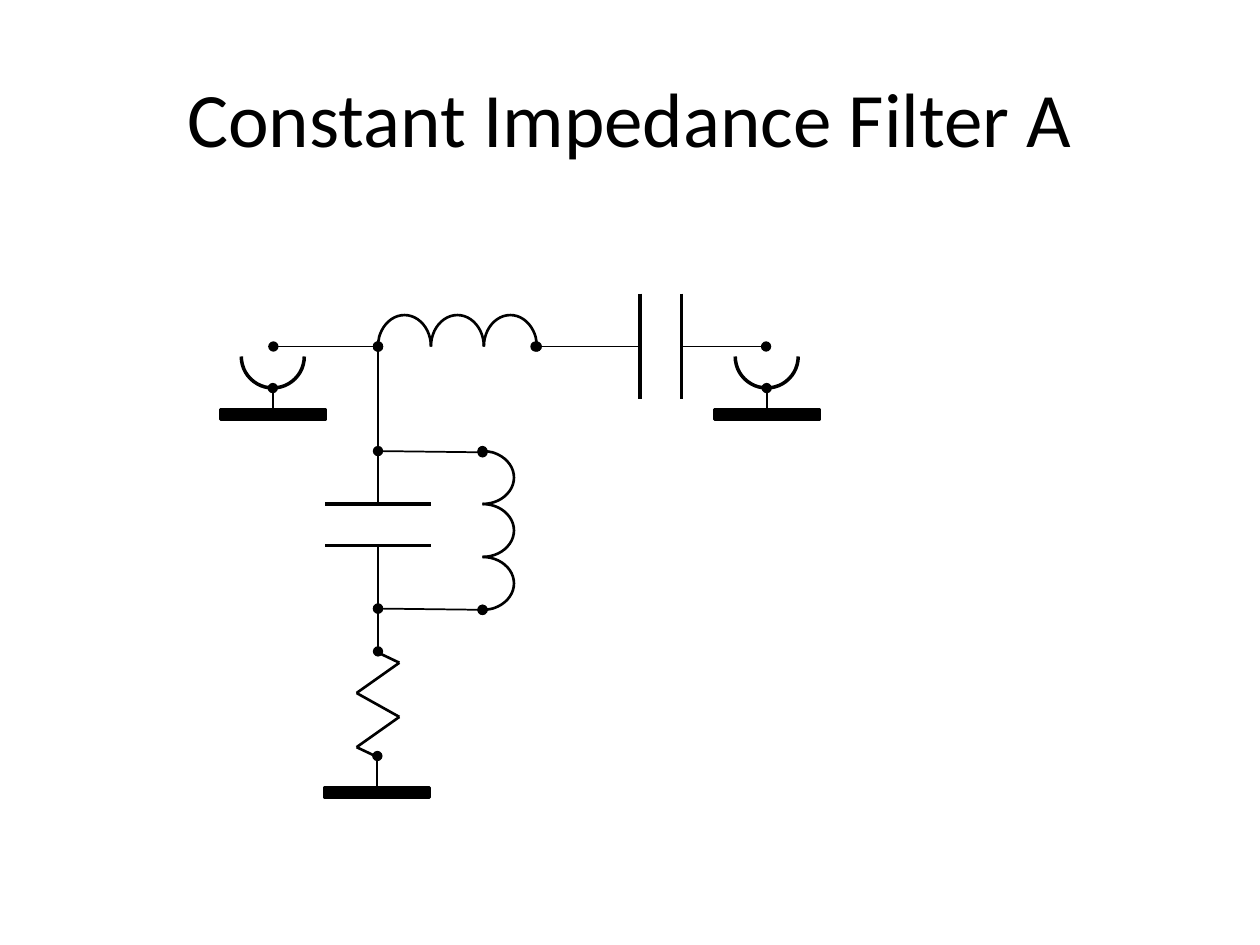
from itertools import pairwise

from lxml.etree import SubElement
from pptx import Presentation
from pptx.dml.color import RGBColor
from pptx.enum.shapes import MSO_CONNECTOR as Connector, MSO_SHAPE as Shape
from pptx.enum.text import MSO_ANCHOR as Anchor, PP_ALIGN as Align
from pptx.oxml.ns import qn
from pptx.util import Inches, Pt

INK = "000000"
LOBE_WIDTH, LOBE_HEIGHT = 0.5, 0.42
PLATE, PLATE_GAP = 0.84, 0.33
BAR_WIDTH, BAR_HEIGHT = 0.83, 0.08


def color(hex_code):
    return RGBColor.from_string(hex_code)


def set_stroke(part, weight, head=False, tail=False):
    part.line.color.rgb = color(INK)
    part.line.width = Pt(weight)
    outline = part.element.find(".//" + qn("a:ln"))
    for tag, dotted in (("a:headEnd", head), ("a:tailEnd", tail)):
        if dotted:
            SubElement(outline, qn(tag), type="oval")


def add_line(shapes, start, end, weight=1, head=False, tail=False):
    wire = shapes.add_connector(Connector.STRAIGHT, *map(Inches, (*start, *end)))
    set_stroke(wire, weight, head, tail)
    SubElement(wire.element.spPr, qn("a:effectLst"))


def add_half_ring(shapes, center, width, height, rotation, weight, head=False, tail=False):
    x, y = center
    ring = shapes.add_shape(
        Shape.ARC, *map(Inches, (x - width / 2, y - height / 2, width, height)))
    ring.adjustments[0], ring.adjustments[1] = 162, 54
    ring.rotation = rotation
    ring.fill.background()
    ring.shadow.inherit = False
    set_stroke(ring, weight, head, tail)


def add_inductor(slide, left, top, upright):
    coil = slide.shapes.add_group_shape().shapes
    for turn in range(3):
        along = LOBE_HEIGHT * (turn + 0.5)
        center = (left, top + along) if upright else (left + along, top)
        add_half_ring(coil, center, LOBE_WIDTH, LOBE_HEIGHT, 0 if upright else 270,
                      1.5, head=turn == 0, tail=turn == 2)


def add_capacitor(slide, left, top, upright):
    plates = slide.shapes.add_group_shape().shapes
    for offset in (0, PLATE_GAP):
        if upright:
            start, end = (left + offset, top), (left + offset, top + PLATE)
        else:
            start, end = (left, top + offset), (left + PLATE, top + offset)
        add_line(plates, start, end, 2)


def add_resistor(slide, left, top):
    zigzag = slide.shapes.add_group_shape().shapes
    bends = [(0.15, 0), (0.34, 0.09), (0, 0.33), (0.34, 0.52), (0, 0.76), (0.19, 0.85)]
    for start, end in pairwise((left + x, top + y) for x, y in bends):
        add_line(zigzag, start, end, 1.5)


def add_ground(shapes, left, top, lead):
    bar = shapes.add_shape(
        Shape.RECTANGLE, *map(Inches, (left, top, BAR_WIDTH, BAR_HEIGHT)))
    bar.fill.solid()
    bar.fill.fore_color.rgb = color(INK)
    bar.shadow.inherit = False
    set_stroke(bar, 2)
    middle = left + BAR_WIDTH / 2
    add_line(shapes, (middle, top - lead), (middle, top), head=True)


def add_socket(slide, left, top):
    socket = slide.shapes.add_group_shape().shapes
    add_half_ring(socket, (left + BAR_WIDTH / 2, top + 0.25), 0.5, 0.5, 90, 2)
    add_ground(socket, left, top + 0.67, 0.17)


def add_wires(slide, left, top):
    wires = slide.shapes.add_group_shape().shapes
    runs = [
        ((0, 0), (0.83, 0), True, True),
        ((2.08, 0), (2.91, 0), True, False),
        ((3.25, 0), (3.91, 0), False, True),
        ((0.83, 0.83), (1.66, 0.84), True, True),
        ((0.83, 2.08), (1.66, 2.09), True, True),
        ((0.83, 0.83), (0.83, 0), False, True),
        ((0.83, 0.83), (0.83, 1.25), False, False),
        ((0.83, 1.58), (0.83, 2.08), False, False),
        ((0.83, 2.42), (0.83, 2.08), True, True),
    ]
    for (x1, y1), (x2, y2), head, tail in runs:
        add_line(wires, (left + x1, top + y1), (left + x2, top + y2), 1, head, tail)


def add_title(slide, left, top, width, height):
    title = slide.shapes.title
    title.left, title.top, title.width, title.height = map(
        Inches, (left, top, width, height))
    title.text_frame.vertical_anchor = Anchor.MIDDLE
    heading = title.text_frame.paragraphs[0]
    heading.alignment = Align.CENTER
    run = heading.add_run()
    run.text = "Constant Impedance Filter A"
    run.font.name = "Calibri"
    run.font.size = Pt(44)
    run.font.color.rgb = color(INK)


def add_circuit(slide, left, top):
    add_inductor(slide, left + 2.08, top + 1, upright=True)
    add_inductor(slide, left + 1.25, top + 0.17, upright=False)
    add_wires(slide, left + 0.42, top + 0.17)
    add_capacitor(slide, left + 3.33, top - 0.25, upright=True)
    add_capacitor(slide, left + 0.83, top + 1.42, upright=False)
    add_resistor(slide, left + 1.08, top + 2.59)
    add_ground(slide.shapes.add_group_shape().shapes, left + 0.83, top + 3.67, 0.25)
    for offset in (0, 3.92):
        add_socket(slide, left + offset, top)


def main():
    deck = Presentation()
    deck.slide_width, deck.slide_height = Inches(10), Inches(7.5)
    slide = deck.slides.add_slide(deck.slide_layouts[5])
    add_title(slide, 0.5, 0.3, 9, 1.25)
    add_circuit(slide, 1.75, 2.58)
    deck.save("out.pptx")


if __name__ == "__main__":
    main()
